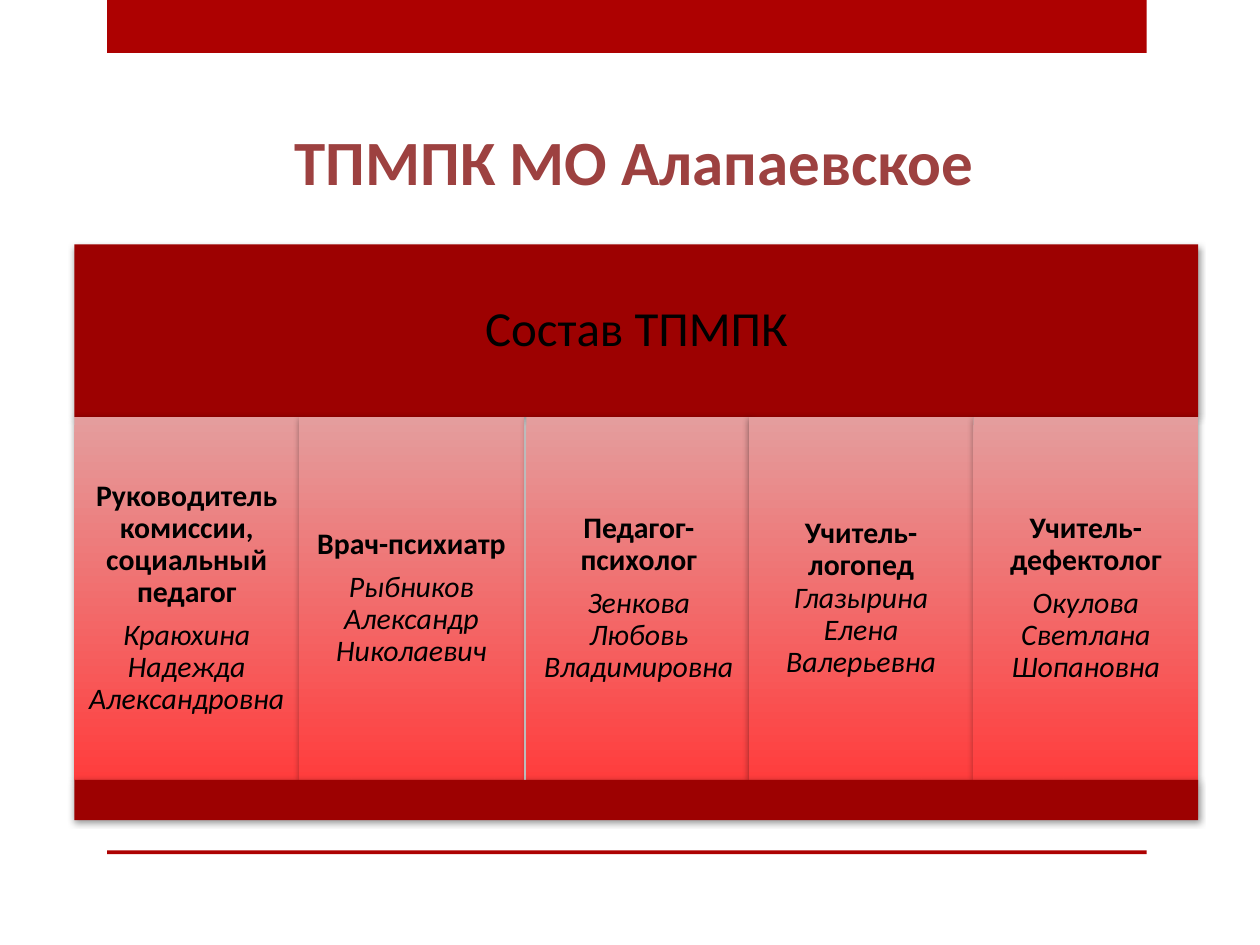
from lxml.etree import SubElement
from pptx import Presentation
from pptx.dml.color import RGBColor
from pptx.enum.shapes import MSO_SHAPE
from pptx.enum.text import MSO_ANCHOR, PP_ALIGN
from pptx.oxml.ns import qn
from pptx.util import Inches, Pt

LEFT, WIDTH = 0.59, 8.92
HEAD_TOP, COL_TOP, FOOT_TOP, BOTTOM = 1.94, 3.31, 6.19, 6.51
BLACK, BAND, ACCENT = "000000", "9D0101", "AD0101"
MEMBERS = [  # each member is a list of paragraphs, each paragraph a list of runs
    [["Руководитель комиссии, социальный педагог"], ["Краюхина Надежда Александровна"]],
    [["Врач-психиатр"], ["Рыбников Александр Николаевич"]],
    [["Педагог-психолог"], ["Зенкова Любовь Владимировна"]],
    [["Учитель-логопед ", "Глазырина Елена Валерьевна"]],
    [["Учитель-дефектолог"], ["Окулова Светлана Шопановна"]],
]


def rgb(color):
    return RGBColor.from_string(color)


def add_block(x, y, w, h, color=None, shadow=True, inset=0.07):
    """Add a borderless rectangle; without a color it gets the column gradient."""
    s = slide.shapes.add_shape(MSO_SHAPE.RECTANGLE, Inches(x), Inches(y), Inches(w), Inches(h))
    s.line.fill.background()
    if color:
        s.fill.solid()
        s.fill.fore_color.rgb = rgb(color)
    else:
        s.fill.gradient()
        s.fill.gradient_angle = 270
        for stop, shade, at in zip(s.fill.gradient_stops, ("E49D9D", "FF3D3D"), (0, 1)):
            stop.color.rgb = rgb(shade)
            stop.position = at
    s.shadow.inherit = False
    if shadow:
        effects = s._element.spPr.find(qn("a:effectLst"))
        outer = SubElement(effects, qn("a:outerShdw"), blurRad=str(Pt(4)), dist=str(Pt(1)),
                           dir=str(88 * 60000), rotWithShape="0")
        tint = SubElement(outer, qn("a:srgbClr"), val=BLACK)
        SubElement(tint, qn("a:alpha"), val="40000")
    tf = s.text_frame
    tf.word_wrap = True
    tf.vertical_anchor = MSO_ANCHOR.MIDDLE
    tf.margin_left = tf.margin_right = tf.margin_top = tf.margin_bottom = Inches(inset)
    return s


prs = Presentation()
prs.slide_width, prs.slide_height = Inches(10), Inches(7.5)
slide = prs.slides.add_slide(prs.slide_layouts[6])

# Bars at the top and bottom of the page
for y, h in ((0, 0.42), (6.75, 0.03)):
    add_block(0.85, y, 8.25, h, ACCENT, shadow=False)

# Title
tf = slide.shapes.add_textbox(Inches(2.24), Inches(0.6), Inches(6.22), Inches(1.02)).text_frame
tf.word_wrap = True
tf.vertical_anchor = MSO_ANCHOR.BOTTOM
p = tf.paragraphs[0]
p.text = "ТПМПК МО Алапаевское"
p.font.name, p.font.size, p.font.bold = "Calibri", Pt(36), True
p.font.color.rgb = rgb("9D4140")

# Heading band
s = add_block(LEFT, HEAD_TOP, WIDTH, COL_TOP - HEAD_TOP, BAND, inset=0.12)
p = s.text_frame.paragraphs[0]
p.text = "Состав ТПМПК"
p.alignment, p.line_spacing, p.space_after = PP_ALIGN.CENTER, 0.9, Pt(10)
p.font.name, p.font.size = "Calibri", Pt(28)
p.font.color.rgb = rgb(BLACK)

# One column per member: role in bold, name in italics
col_w = WIDTH / len(MEMBERS)
for i, member in enumerate(MEMBERS):
    nudge = 0.02 if i == 2 else 0  # leaves the thin gap before the middle column
    s = add_block(LEFT + i * col_w + nudge, COL_TOP, col_w, FOOT_TOP - COL_TOP)
    tf = s.text_frame
    texts = 0
    for j, runs in enumerate(member):
        p = tf.add_paragraph() if j else tf.paragraphs[0]
        p.alignment, p.line_spacing, p.space_after = PP_ALIGN.CENTER, 0.9, Pt(6)
        p.font.name, p.font.size = "Calibri", Pt(17)
        p.font.color.rgb = rgb(BLACK)
        for text in runs:
            r = p.add_run()
            r.text = text
            r.font.bold, r.font.italic = texts == 0, texts > 0
            texts += 1

# Footer band
add_block(LEFT, FOOT_TOP, WIDTH, BOTTOM - FOOT_TOP, BAND)

prs.save("out.pptx")
